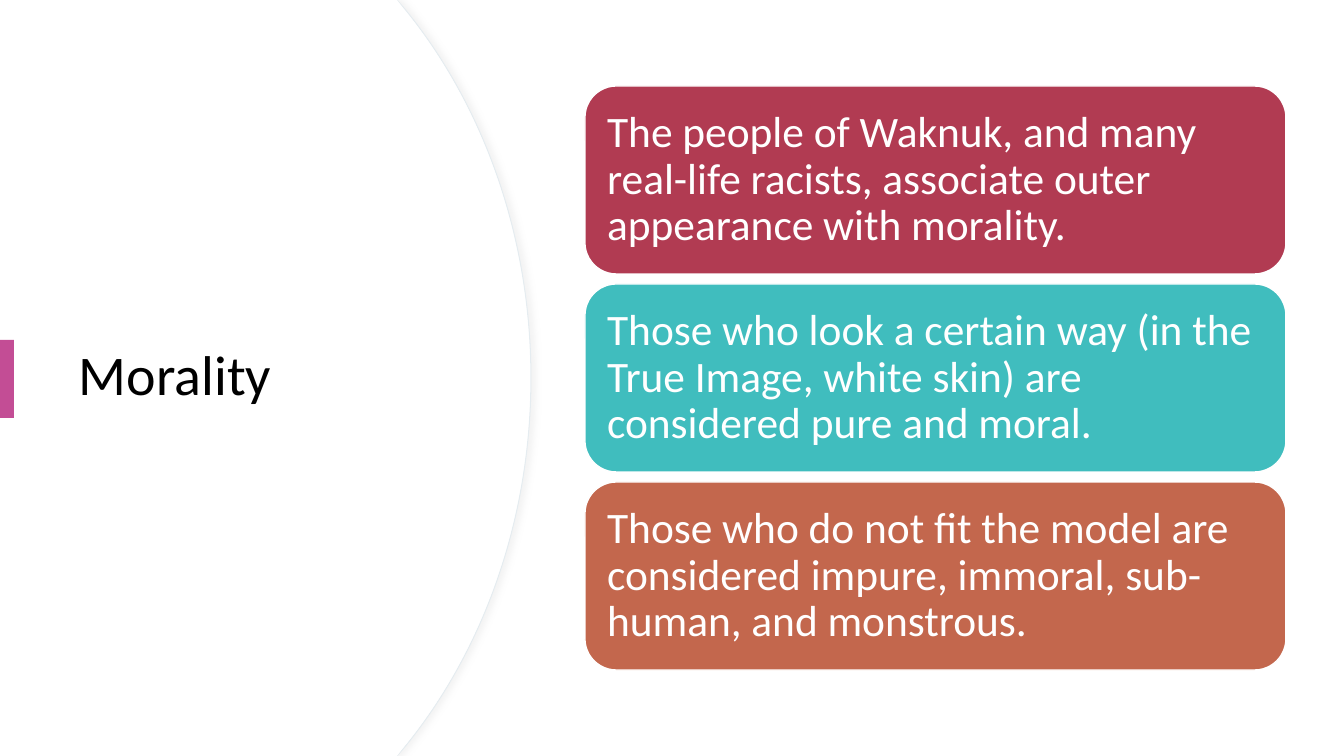
"""Build the Morality slide: a curved title panel beside three stacked cards."""
from lxml import etree
from pptx import Presentation
from pptx.dml.color import RGBColor
from pptx.enum.shapes import MSO_SHAPE
from pptx.enum.text import MSO_ANCHOR, PP_ALIGN
from pptx.oxml.ns import qn
from pptx.util import Pt

RECT = MSO_SHAPE.RECTANGLE
ROUND = MSO_SHAPE.ROUNDED_RECTANGLE
MIDDLE = MSO_ANCHOR.MIDDLE
LEFT = PP_ALIGN.LEFT

TITLE = "Morality"
CARDS = [
    ("The people of Waknuk, and many real-life racists, associate outer "
     "appearance with morality.", "B13B52"),
    ("Those who look a certain way (in the True Image, white skin) are "
     "considered pure and moral.", "40BDBE"),
    ("Those who do not fit the model are considered impure, immoral, "
     "sub-human, and monstrous.", "C3674D"),
]
FONT = "Calibri"
WHITE, BLACK, PINK = "FFFFFF", "000000", "C34D95"
EDGE, SHADE = "E5ECF0", "D9D9D9"

WIDE, HIGH = 1344, 756
TITLE_BOX = (69, 128, 397, 499)
BAR_BOX = (0, 340, 14, 78)
CARD_X, CARD_Y, CARD_W, CARD_H, CARD_GAP = 585, 86, 701, 188, 10
ARC = [(404, 8), (482, 103), (531, 234), (531, 378)]
ARC_TOP = 397


def px(num):
    return round(num * 914400 / 100.8)


def color(code):
    return RGBColor.from_string(code)


def paint(shape, fill, line=None, width=1):
    shape.shadow.inherit = False
    shape.fill.solid()
    shape.fill.fore_color.rgb = color(fill)
    if line:
        shape.line.color.rgb = color(line)
        shape.line.width = Pt(width)
    else:
        shape.line.fill.background()


def write(shape, text, size, ink, inset):
    frame = shape.text_frame
    frame.word_wrap = True
    frame.vertical_anchor = MIDDLE
    frame.margin_left = frame.margin_right = px(inset)
    frame.margin_top = frame.margin_bottom = px(inset)
    para = frame.paragraphs[0]
    para.alignment = LEFT
    para.line_spacing = 0.9
    run = para.add_run()
    run.text = text
    run.font.name = FONT
    run.font.size = Pt(size)
    run.font.color.rgb = color(ink)


def block(shapes, kind, box, fill, line=None):
    shape = shapes.add_shape(kind, *map(px, box))
    paint(shape, fill, line)
    return shape


def panel(shapes, shift):
    upper = [(x - shift, y) for x, y in ARC]
    lower = [(x, HIGH - y) for x, y in reversed(upper[:-1])]
    dots = [(ARC_TOP, 0), *upper, *lower, (ARC_TOP, HIGH), (0, HIGH)]
    form = shapes.build_freeform(0, 0, scale=1)
    form.add_line_segments([(px(x), px(y)) for x, y in dots], close=True)
    shape = form.convert_to_shape()
    curve(shape)
    return shape


def curve(shape):
    lines = list(shape._element.iter(qn("a:lnTo")))
    for start in (2, 5):
        trio = lines[start:start + 3]
        bend = etree.Element(qn("a:cubicBezTo"))
        trio[0].addprevious(bend)
        for line in trio:
            bend.append(line[0])
            line.getparent().remove(line)


def shade(shape):
    effects = shape._element.spPr.find(qn("a:effectLst"))
    outer = etree.SubElement(effects, qn("a:outerShdw"), blurRad=str(Pt(4)),
                             dist=str(Pt(3)), dir="0", rotWithShape="0")
    tone = etree.SubElement(outer, qn("a:srgbClr"), val=SHADE)
    etree.SubElement(tone, qn("a:alpha"), val="30000")


def main():
    deck = Presentation()
    deck.slide_width, deck.slide_height = px(WIDE), px(HIGH)
    shapes = deck.slides.add_slide(deck.slide_layouts[6]).shapes

    block(shapes, RECT, (0, 0, WIDE, HIGH), WHITE)
    rim = panel(shapes, 0)
    paint(rim, WHITE, EDGE, 0.75)
    shade(rim)
    paint(panel(shapes, 1), WHITE)

    title = shapes.add_textbox(*map(px, TITLE_BOX))
    write(title, TITLE, 40, BLACK, 10)
    block(shapes, RECT, BAR_BOX, PINK)

    for row, (text, fill) in enumerate(CARDS):
        top = CARD_Y + row * (CARD_H + CARD_GAP)
        card = block(shapes, ROUND, (CARD_X, top, CARD_W, CARD_H), fill, WHITE)
        write(card, text, 31, WHITE, 13)

    deck.save("out.pptx")


if __name__ == "__main__":
    main()
